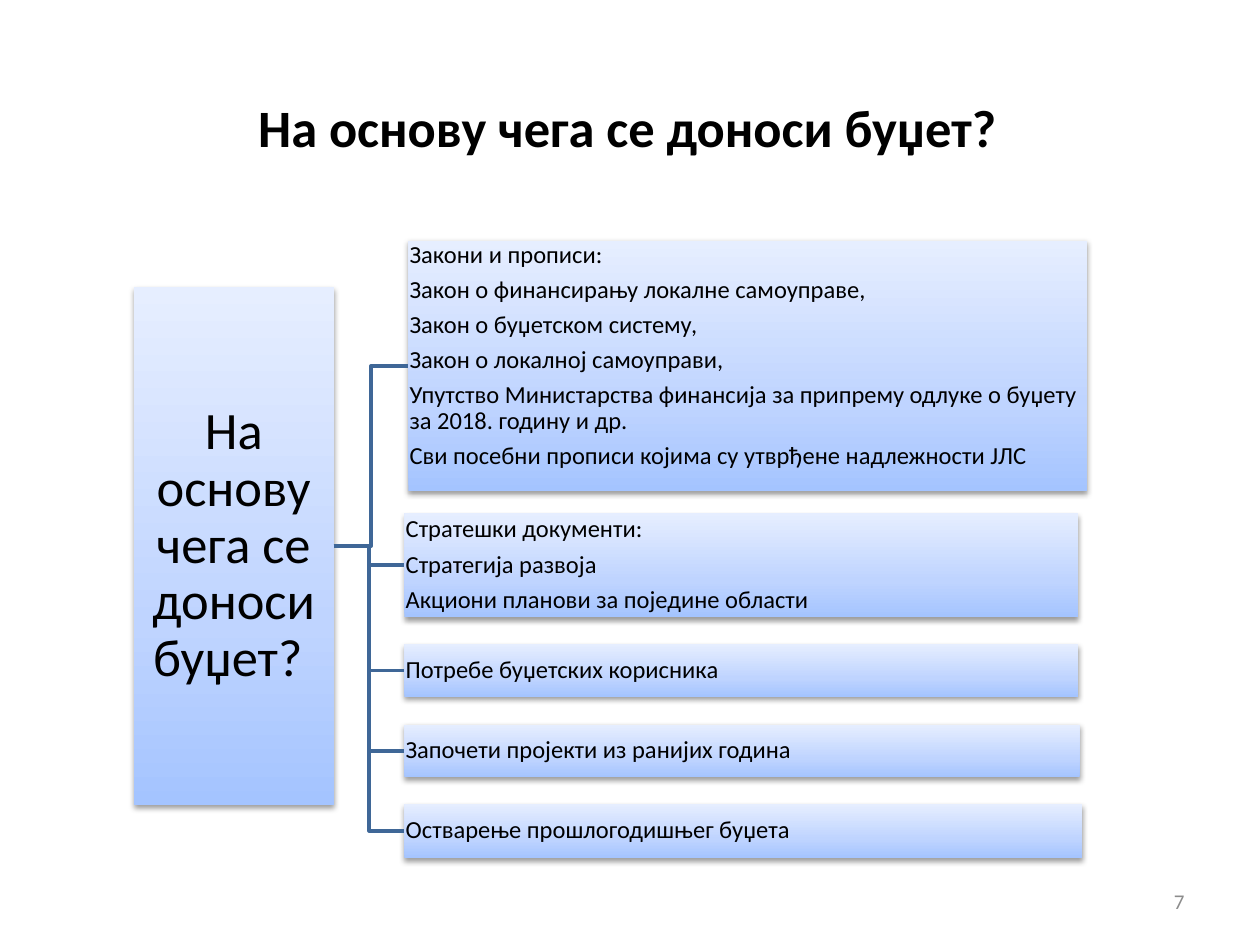
from pptx import Presentation
from pptx import oxml
from pptx import util as u
from pptx.dml import color
from pptx.enum import shapes, text
from pptx.oxml import ns

GRADIENT = ((0, "A4C4FF"), (35, "BFD4FF"), (100, "E6EEFF"))


def rgb(value):
    """Turn a hex string into a colour."""
    return color.RGBColor.from_string(value)


class Deck:
    """Holds the style and the current slide."""

    font = "Calibri"
    ink = "000000"
    branch_color = "3F6797"

    def __init__(self):
        """Start a presentation with one title-only slide."""
        self.prs = Presentation()
        self.prs.slide_width, self.prs.slide_height = u.Inches(10), u.Inches(7.5)
        self.slide = self.prs.slides.add_slide(self.prs.slide_layouts[5])

    def place(self, item, left, top, width, height):
        """Move and size an item in inches."""
        item.left, item.top = u.Inches(left), u.Inches(top)
        item.width, item.height = u.Inches(width), u.Inches(height)

    def add_lines(self, frame, lines, size, align, anchor=text.MSO_ANCHOR.MIDDLE,
                  ink=None, bold=False, inset=None, tight=False):
        """Fill a text frame with one paragraph per line."""
        frame.word_wrap = True
        frame.vertical_anchor = anchor
        if inset is not None:
            frame.margin_left = frame.margin_right = u.Inches(inset)
            frame.margin_top = frame.margin_bottom = u.Inches(inset)
        for index, line in enumerate(lines):
            paragraph = frame.add_paragraph() if index else frame.paragraphs[0]
            paragraph.alignment = align
            if tight:
                paragraph.line_spacing = 0.9
                paragraph.space_after = u.Pt(size * 0.35)
            run = paragraph.add_run()
            run.text = line
            run.font.name, run.font.size, run.font.bold = self.font, u.Pt(size), bold
            run.font.color.rgb = rgb(ink or self.ink)

    def title(self, line, *box):
        """Fill in the slide title."""
        heading = self.slide.shapes.title
        self.place(heading, *box)
        self.add_lines(heading.text_frame, [line], 30, text.PP_ALIGN.CENTER, bold=True)

    def page_number(self, number, *box):
        """Add the page number."""
        label = self.slide.shapes.add_textbox(*map(u.Inches, box))
        self.add_lines(label.text_frame, [number], 12, text.PP_ALIGN.RIGHT, ink="8C8C8C")

    def panel(self, box, lines, size=14, align=text.PP_ALIGN.LEFT,
              anchor=text.MSO_ANCHOR.MIDDLE, inset=0.01):
        """Add a shaded rectangle with text."""
        panel = self.slide.shapes.add_shape(
            shapes.MSO_SHAPE.RECTANGLE, *map(u.Inches, box))
        panel.line.fill.background()
        panel.shadow.inherit = False
        stops = "".join(
            f'<a:gs pos="{pos * 1000}"><a:srgbClr val="{value}"/></a:gs>'
            for pos, value in GRADIENT)
        properties = panel.element.spPr
        properties.insert(2, oxml.parse_xml(
            f'<a:gradFill {ns.nsdecls("a")} rotWithShape="1"><a:gsLst>{stops}</a:gsLst>'
            '<a:lin ang="16200000" scaled="0"/></a:gradFill>'))
        properties.find(ns.qn("a:effectLst")).append(oxml.parse_xml(
            f'<a:outerShdw {ns.nsdecls("a")} blurRad="40000" dist="20000" dir="5400000" '
            'rotWithShape="0"><a:srgbClr val="000000"><a:alpha val="38000"/>'
            '</a:srgbClr></a:outerShdw>'))
        self.add_lines(panel.text_frame, lines, size, align, anchor,
                       inset=inset, tight=True)
        return panel

    def branch(self, parent, child):
        """Join the right side of a parent to the left side of a child."""
        link = self.slide.shapes.add_connector(
            shapes.MSO_CONNECTOR.ELBOW,
            parent.left + parent.width, parent.top + parent.height // 2,
            child.left, child.top + child.height // 2)
        link.begin_connect(parent, 3)
        link.end_connect(child, 1)
        link.line.color.rgb = rgb(self.branch_color)
        link.line.width = u.Pt(2)
        link.element.spPr.append(oxml.parse_xml(f'<a:effectLst {ns.nsdecls("a")}/>'))


def main():
    """Build the budget slide."""
    question = "На основу чега се доноси буџет?"
    laws = ["Закони и прописи:",
            "Закон о финансирању локалне самоуправе,",
            "Закон о буџетском систему,",
            "Закон о локалној самоуправи,",
            "Упутство Министарства финансија за припрему одлуке о буџету "
            "за 2018. годину и др.",
            "Сви посебни прописи којима су утврђене надлежности ЈЛС"]
    strategies = ["Стратешки документи:",
                  "Стратегија развоја",
                  "Акциони планови за поједине области"]
    sources = [
        ((3.21, 4.07, 5.35, 0.83), strategies),
        ((3.21, 5.11, 5.35, 0.42), ["Потребе буџетских корисника"]),
        ((3.21, 5.75, 5.36, 0.42), ["Започети пројекти из ранијих година"]),
        ((3.21, 6.38, 5.38, 0.43), ["Остварење прошлогодишњег буџета"]),
    ]

    deck = Deck()
    deck.title(question, 0.48, 0.54, 9, 0.93)
    deck.page_number("7", 7.17, 6.95, 2.33, 0.4)
    root = deck.panel((1.06, 2.28, 1.59, 4.11), [question + " "], 30,
                      text.PP_ALIGN.CENTER, inset=0.02)
    panels = [deck.panel((3.24, 1.91, 5.39, 1.99), laws, anchor=text.MSO_ANCHOR.TOP)]
    panels += [deck.panel(box, lines) for box, lines in sources]
    for panel in panels:
        deck.branch(root, panel)
    deck.prs.save("out.pptx")


if __name__ == "__main__":
    main()
